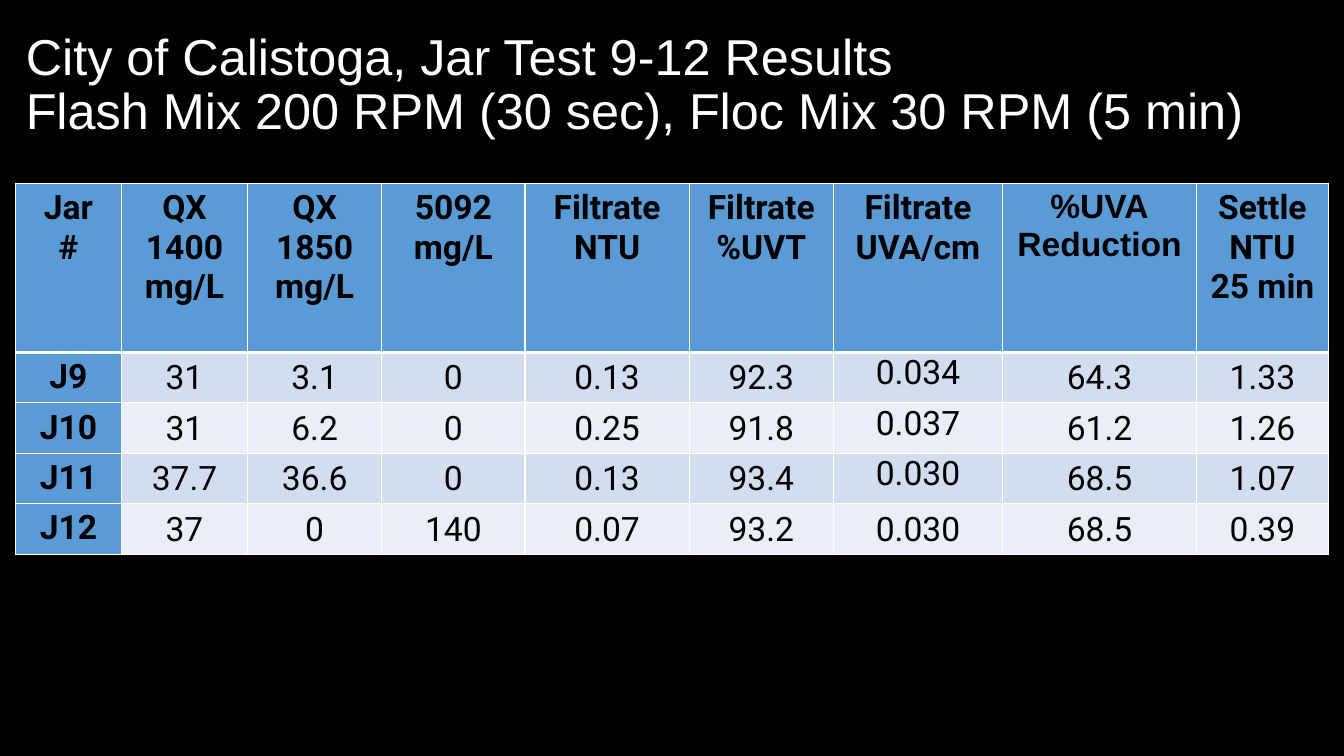
from lxml import etree
from pptx import Presentation
from pptx.dml.color import RGBColor
from pptx.enum.text import MSO_ANCHOR, PP_ALIGN
from pptx.oxml.ns import qn
from pptx.util import Cm, Pt

CENTER = PP_ALIGN.CENTER
TOP, MIDDLE = MSO_ANCHOR.TOP, MSO_ANCHOR.MIDDLE

TITLE = ["City of Calistoga, Jar Test 9-12 Results",
         "Flash Mix 200 RPM (30 sec), Floc Mix 30 RPM (5 min)"]
HEADER = [["Jar", "#"], ["QX", "1400", "mg/L"], ["QX", "1850", "mg/L"],
          ["5092", "mg/L"], ["Filtrate", "NTU"], ["Filtrate", "%UVT"],
          ["Filtrate", "UVA/cm"], ["%UVA", "Reduction"],
          ["Settle", "NTU", "25 min"]]
RESULTS = [
    ["J9", "31", "3.1", "0", "0.13", "92.3", "0.034", "64.3", "1.33"],
    ["J10", "31", "6.2", "0", "0.25", "91.8", "0.037", "61.2", "1.26"],
    ["J11", "37.7", "36.6", "0", "0.13", "93.4", "0.030", "68.5", "1.07"],
    ["J12", "37", "0", "140", "0.07", "93.2", "0.030", "68.5", "0.39"],
]
COL_WIDTHS = [2.67, 3.18, 3.38, 3.61, 4.14, 3.63, 4.27, 4.88, 3.33]
HEADER_HEIGHT, ROW_HEIGHT = 4.26, 1.2
UVA_COL, REDUCTION_COL = 6, 7
BLACK, WHITE, BLUE = "000000", "FFFFFF", "5B9BD5"
BANDS = ["D2DEEF", "EAEFF7"]
TIGHT = {"margin_left": Cm(0.03), "margin_right": Cm(0.03),
         "margin_top": Cm(0.03), "margin_bottom": 0}


def paint(target, color):
    """Give a fill a solid colour from a hex string."""
    target.solid()
    target.fore_color.rgb = RGBColor.from_string(color)


def apply(obj, values):
    """Set attributes of an object from a dict."""
    for name, value in values.items():
        setattr(obj, name, value)


def style(font, name, size, color, bold=False):
    """Set typeface, size, weight and colour of a font."""
    apply(font, {"name": name, "size": Pt(size), "bold": bold})
    paint(font.fill, color)


def add_borders(cell, widths):
    """Draw white cell edges with the given point widths."""
    tcPr = cell._tc.get_or_add_tcPr()
    for side, width in widths.items():
        ln = etree.SubElement(tcPr, qn(f"a:ln{side}"), w=str(Pt(width)))
        fill = etree.SubElement(ln, qn("a:solidFill"))
        etree.SubElement(fill, qn("a:srgbClr"), val=WHITE)


def add_title(s):
    """Add the two-line heading."""
    tf = s.shapes.add_textbox(Cm(0.4), Cm(0.33), Cm(33.07), Cm(3.68)).text_frame
    apply(tf, {"word_wrap": True, "vertical_anchor": MIDDLE})
    p = tf.paragraphs[0]
    p.line_spacing = 0.9
    for i, line in enumerate(TITLE):
        if i:
            p.add_line_break()
        r = p.add_run()
        r.text = line
        style(r.font, "Arial", 36, WHITE)


def fill_cell(cell, row, col, lines):
    """Write and format one cell by its place in the table."""
    is_label = row == 0 or col == 0
    add_borders(cell, {"L": 1, "R": 1, "T": 3 if row == 1 else 1,
                       "B": 3 if row == 0 else 1})
    paint(cell.fill, BLUE if is_label else BANDS[(row - 1) % 2])
    if not is_label:
        at_top = col == UVA_COL and row < len(RESULTS)
        apply(cell, {**TIGHT, "vertical_anchor": TOP if at_top else MIDDLE})
    face = "Arial" if (row, col) == (0, REDUCTION_COL) else "Roboto"
    tf = cell.text_frame
    for i, line in enumerate(lines):
        p = tf.add_paragraph() if i else tf.paragraphs[0]
        p.alignment = CENTER
        r = p.add_run()
        r.text = line
        style(r.font, face, 24, BLACK, is_label)


def add_results(s):
    """Add the jar test table."""
    rows = [HEADER] + [[[value] for value in row] for row in RESULTS]
    heights = [HEADER_HEIGHT] + [ROW_HEIGHT] * len(RESULTS)
    table = s.shapes.add_table(len(rows), len(HEADER), Cm(0.39), Cm(4.62),
                               Cm(sum(COL_WIDTHS)), Cm(sum(heights))).table
    for column, width in zip(table.columns, COL_WIDTHS):
        column.width = Cm(width)
    for i, row in enumerate(rows):
        table.rows[i].height = Cm(heights[i])
        for j, lines in enumerate(row):
            fill_cell(table.cell(i, j), i, j, lines)


def main():
    """Build and save the slide."""
    prs = Presentation()
    apply(prs, {"slide_width": Cm(33.87), "slide_height": Cm(19.05)})
    s = prs.slides.add_slide(prs.slide_layouts[6])
    paint(s.background.fill, BLACK)
    add_title(s)
    add_results(s)
    prs.save("out.pptx")


if __name__ == "__main__":
    main()
